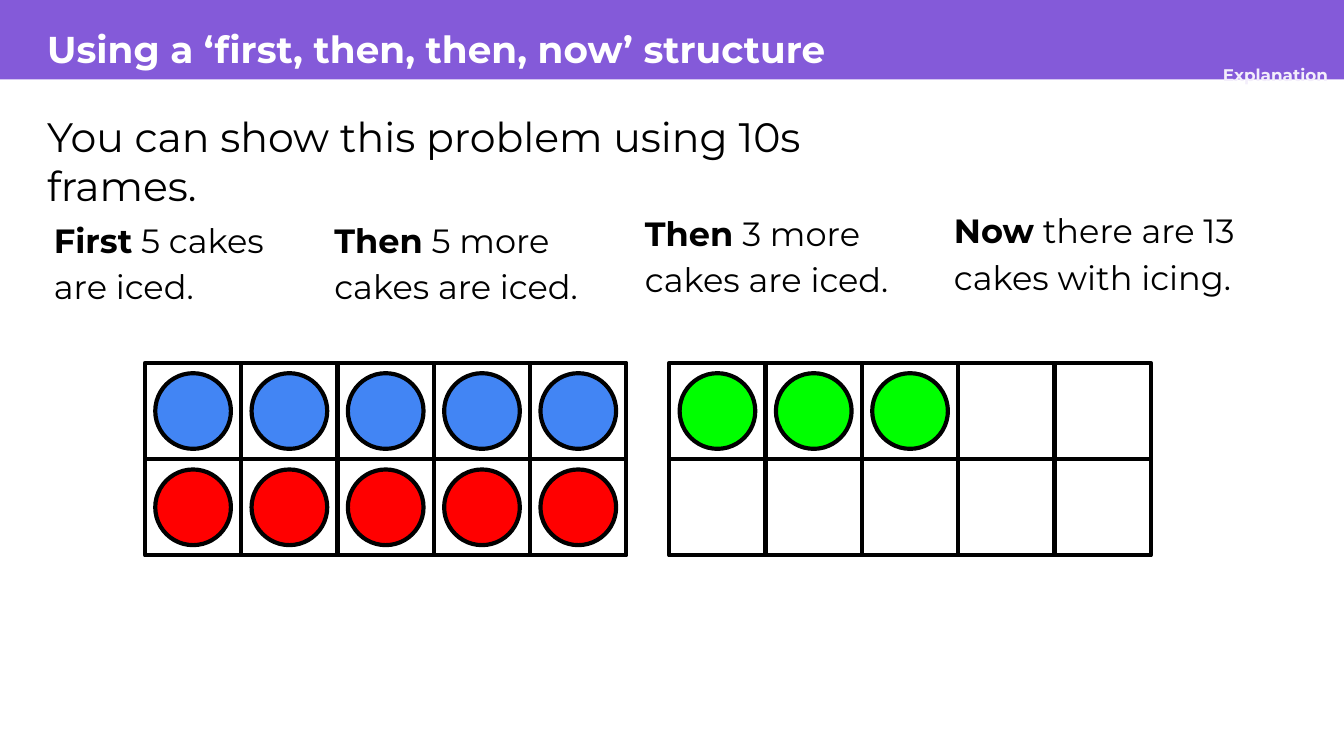
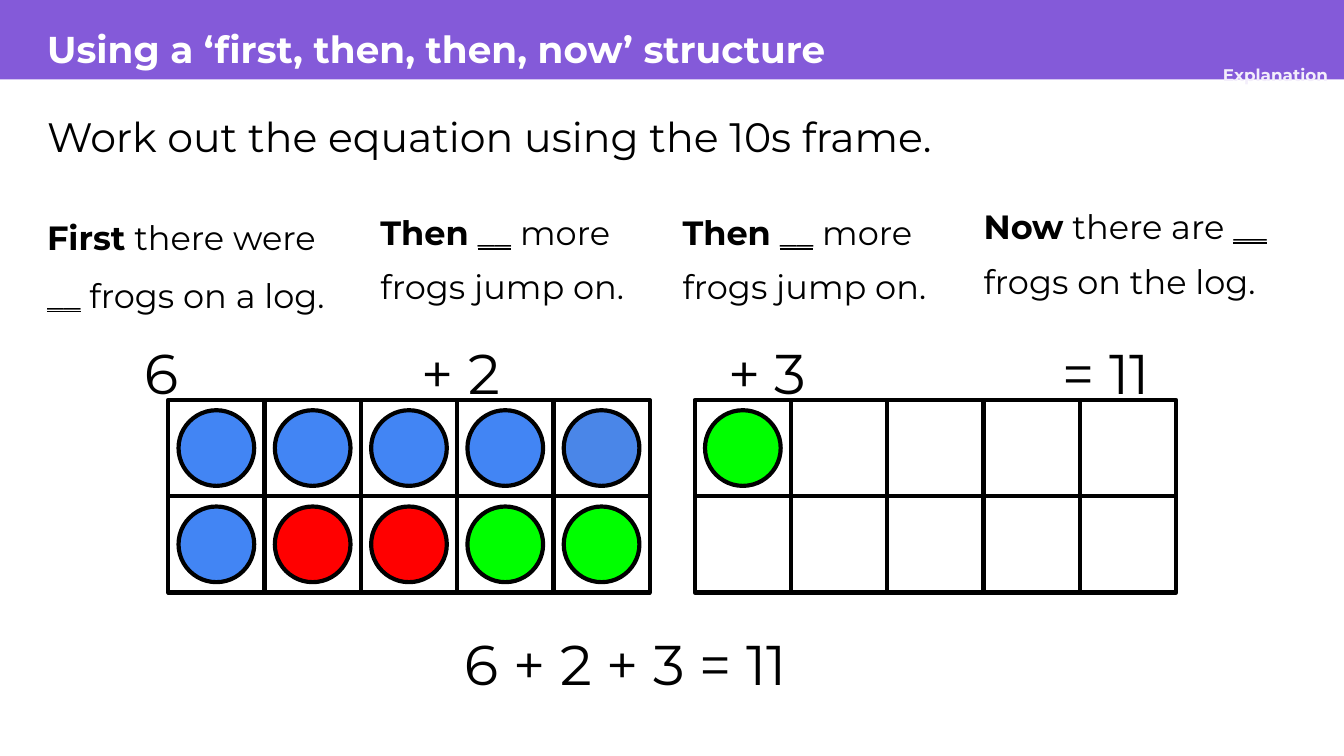
from pptx import Presentation
from pptx import util as u
from pptx.dml import color
from pptx.enum import shapes, text

FONT = "Montserrat"
PURPLE, LILAC, WHITE, BLACK = "845AD9", "F3EEFB", "FFFFFF", "000000"
COUNTERS = {"B": "4285F4", "b": "4A86E8", "R": "FF0000", "G": "00FF00"}
TITLE = "Using a ‘first, then, then, now’ structure"
CELL, COUNTER = 1.82, 1.43
COLUMNS = 5
INSET = 0.25


def rgb(value):
    """Turn a hex string into a colour."""
    return color.RGBColor.from_string(value)


def place(shape, box):
    """Put a shape at left, top, width, height in centimetres."""
    shape.left, shape.top, shape.width, shape.height = map(u.Cm, box)


def style(frame, size, ink=BLACK, bold=None, spacing=1.15, inset=0, align=text.PP_ALIGN.LEFT):
    """Format a one-paragraph text frame and return its paragraph."""
    frame.word_wrap = True
    frame.auto_size = text.MSO_AUTO_SIZE.NONE
    frame.margin_left = frame.margin_right = u.Cm(inset)
    frame.margin_top = frame.margin_bottom = u.Cm(inset)
    para = frame.paragraphs[0]
    para.alignment = align
    para.line_spacing = spacing
    para.font.name = FONT
    para.font.size = u.Pt(size)
    para.font.bold = bold
    para.font.color.rgb = rgb(ink)
    return para


def write(page, box, words, size, **look):
    """Add a text box and return it."""
    shape = page.shapes.add_textbox(*map(u.Cm, box))
    shape.text_frame.text = words
    style(shape.text_frame, size, **look)
    return shape


def draw(group, kind, box, fill=None):
    """Add a black-outlined shape, hollow unless a fill is given."""
    shape = group.shapes.add_shape(kind, *map(u.Cm, box))
    shape.shadow.inherit = False
    shape.line.color.rgb = rgb(BLACK)
    shape.line.width = u.Pt(2.25)
    if fill:
        shape.fill.solid()
        shape.fill.fore_color.rgb = rgb(fill)
    else:
        shape.fill.background()


def add_tens_frame(page, left, top, *rows):
    """Draw two rows of cells, with a counter for each letter in a row."""
    group = page.shapes.add_group_shape()
    gap = (CELL - COUNTER) / 2
    for row, letters in enumerate(rows):
        for column, letter in enumerate(letters.ljust(COLUMNS)):
            x, y = left + column * CELL, top + row * CELL
            draw(group, shapes.MSO_SHAPE.RECTANGLE, (x, y, CELL, CELL))
            if letter in COUNTERS:
                draw(group, shapes.MSO_SHAPE.OVAL, (x + gap, y + gap, COUNTER, COUNTER), COUNTERS[letter])


def add_caption(page, box, lead, rest, spacing=1.15, inset=0):
    """Write a story step with a bold lead word and an underlined blank."""
    shape = write(page, box, "", 18, spacing=spacing, inset=inset)
    para = shape.text_frame.paragraphs[0]
    before, blank, after = rest.partition("__")
    for words in filter(None, (lead, before, blank, after)):
        span = para.add_run()
        span.text = words
        if words == lead:
            span.font.bold = True
        elif words == blank:
            span.font.underline = True


def decorate_layout(deck, layout):
    """Put the purple band and its label on the layout."""
    page = deck.slides[0]
    band = page.shapes.add_shape(shapes.MSO_SHAPE.RECTANGLE, 0, 0, deck.slide_width, u.Cm(1.5))
    band.shadow.inherit = False
    band.fill.solid()
    band.fill.fore_color.rgb = rgb(PURPLE)
    band.line.fill.background()
    label = write(page, (22.81, 1.22, 2.59, 0.38), "Explanation", 9, ink=LILAC, bold=True,
                  spacing=1, align=text.PP_ALIGN.CENTER)
    for position, part in enumerate((band, label), start=2):
        layout.shapes.element.insert(position, part.element)


def add_page(deck, layout, prompt):
    """Add a slide with its title and prompt."""
    page = deck.slides.add_slide(layout)
    title = page.shapes.title
    place(title, (0.89, 0, 21.89, 1.7))
    title.text_frame.text = TITLE
    title.text_frame.vertical_anchor = text.MSO_ANCHOR.MIDDLE
    style(title.text_frame, 20, ink=WHITE, bold=True)
    write(page, (0.89, 2.11, 17.04, 1.35), prompt, 22, spacing=1)
    return page


def build_cakes(deck, layout):
    """Build the worked example with cakes."""
    page = add_page(deck, layout, "You can show this problem using 10s frames.")
    add_tens_frame(page, 2.74, 6.86, "BBBBB", "RRRRR")
    add_tens_frame(page, 12.65, 6.86, "GGG", "")
    add_caption(page, (1.02, 4.04, 4.62, 2.54), "First", " 5 cakes are iced.")
    add_caption(page, (6.32, 4.04, 5.54, 1.93), "Then", " 5 more cakes are iced.")
    add_caption(page, (12.19, 3.91, 5.54, 1.93), "Then", " 3 more cakes are iced.")
    add_caption(page, (18.03, 3.86, 6.73, 2.11), "Now", " there are 13 cakes with icing.")


def build_frogs(deck, layout):
    """Build the frog problem with its equation."""
    page = add_page(deck, layout, "Work out the equation using the 10s frame.")
    add_tens_frame(page, 3.18, 7.56, "BBBBb", "BRRGG")
    add_tens_frame(page, 13.13, 7.56, "G", "")
    add_caption(page, (0.64, 3.54, 6.15, 2.29), "First", " there were __ frogs on a log.", 1.42, INSET)
    for left in (7.19, 12.9):
        add_caption(page, (left, 3.74, 5.54, 1.93), "Then", " __ more frogs jump on.", 1.35)
    add_caption(page, (18.59, 3.63, 6.15, 2.11), "Now", " there are __ frogs on the log.", 1.35)
    terms = (("6", 2.49, 1.73), ("+ 2", 7.72, 2.97), ("+ 3", 13.51, 2.62), ("= 11", 19.84, 2.49))
    for term, left, width in terms:
        write(page, (left, 5.77, width, 1.8), term, 30, spacing=1.3, inset=INSET)
    write(page, (8.53, 11.46, 8.33, 1.8), "6 + 2 + 3 = 11", 30, inset=INSET)


def main():
    """Build and save the deck."""
    deck = Presentation()
    deck.slide_width, deck.slide_height = u.Cm(25.4), u.Cm(14.29)
    layout = deck.slide_layouts.get_by_name("Title Only")
    build_cakes(deck, layout)
    build_frogs(deck, layout)
    decorate_layout(deck, layout)
    deck.save("out.pptx")


if __name__ == "__main__":
    main()
